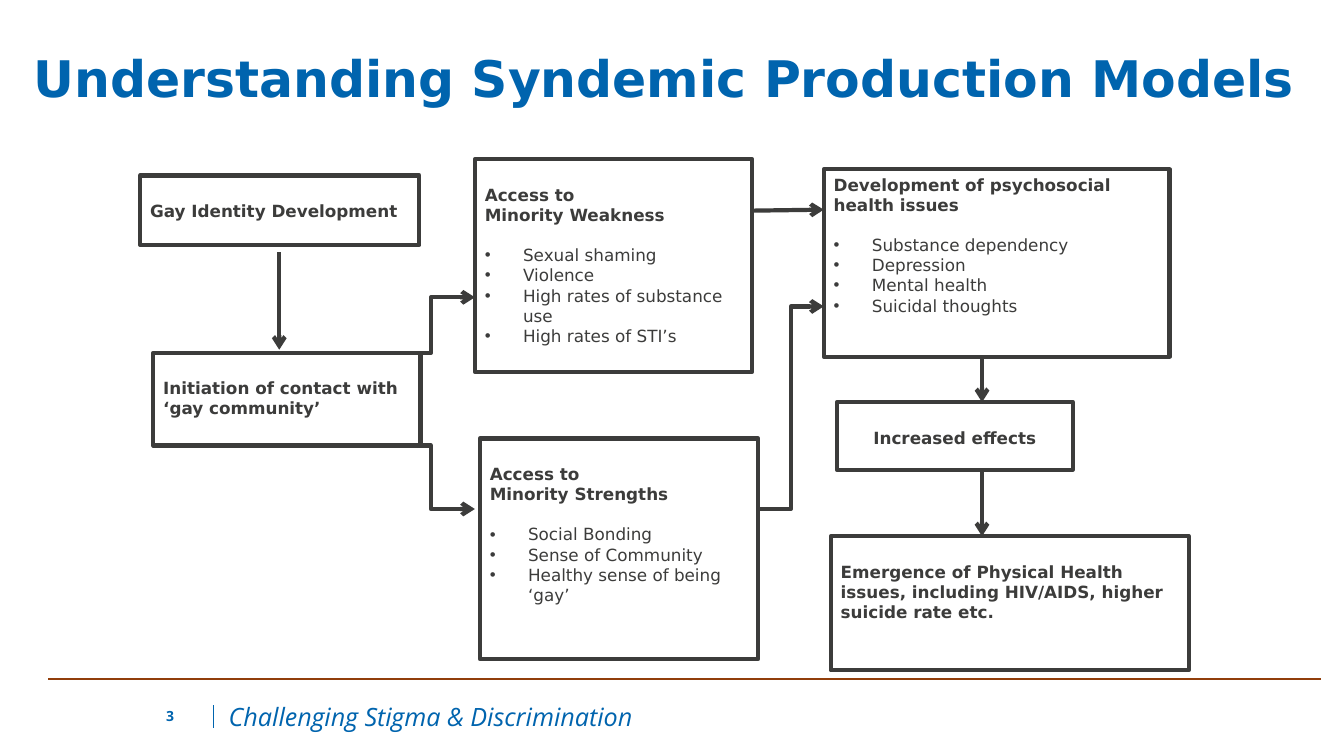
from dataclasses import dataclass

from lxml import etree
from pptx import Presentation
from pptx.dml.color import RGBColor
from pptx.enum.shapes import MSO_CONNECTOR, MSO_SHAPE
from pptx.enum.text import MSO_ANCHOR, MSO_AUTO_SIZE, PP_ALIGN
from pptx.oxml.ns import qn
from pptx.util import Emu, Pt

STRAIGHT, ELBOW = MSO_CONNECTOR.STRAIGHT, MSO_CONNECTOR.ELBOW
RECTANGLE = MSO_SHAPE.RECTANGLE
TOP, MIDDLE = MSO_ANCHOR.TOP, MSO_ANCHOR.MIDDLE
LEFT, CENTER = PP_ALIGN.LEFT, PP_ALIGN.CENTER
NO_AUTOFIT = MSO_AUTO_SIZE.NONE

EMU_PER_PX = 9144  # 100 px to the inch
TITLE_ONLY = 5
BLUE, CHARCOAL, BROWN, WHITE = "0064AE", "3C3C3B", "913E0B", "FFFFFF"

TITLE_FORMAT = {"name": "DejaVu Sans", "size": Pt(36), "bold": True}
HEADING_FORMAT = {"name": "DejaVu Sans", "size": Pt(12), "bold": True}
BULLET_FORMAT = HEADING_FORMAT | {"bold": False}
FOOTER_FORMAT = {"name": "Open Sans", "size": Pt(18), "italic": True}
NUMBER_FORMAT = {"name": "Open Sans", "size": Pt(10), "bold": True}

INSET_X, INSET_Y = 10, 5
LINE_HEIGHT = 20
BULLET_INDENT = 38


@dataclass
class Box:
    left: int
    top: int
    width: int
    height: int
    headings: tuple[str, ...]
    bullets: tuple[str, ...] = ()
    lines_above: int = 1
    align: PP_ALIGN = LEFT


@dataclass
class Line:
    start: tuple[int, int]
    end: tuple[int, int]
    kind: MSO_CONNECTOR = STRAIGHT
    color: str = CHARCOAL
    weight: float = 3
    arrow: bool = True


BOXES = [
    Box(139, 174, 277, 69, ("Gay Identity Development",)),
    Box(152, 350, 265, 92, ("Initiation of contact with ‘gay community’",)),
    Box(471, 158, 275, 211, ("Access to", "Minority Weakness"),
        ("Sexual shaming", "Violence", "High rates of substance use",
         "High rates of STI’s")),
    Box(476, 435, 276, 219, ("Access to", "Minority Strengths"),
        ("Social Bonding", "Sense of Community",
         "Healthy sense of being ‘gay’")),
    Box(817, 168, 343, 186, ("Development of psychosocial health issues",),
        ("Substance dependency", "Depression", "Mental health",
         "Suicidal thoughts"), lines_above=0),
    Box(824, 532, 355, 133,
        ("Emergence of Physical Health issues, including HIV/AIDS, "
         "higher suicide rate etc.",)),
    Box(830, 399, 234, 67, ("Increased effects",), align=CENTER),
]

FOOTER_LINES = [
    Line((48, 674), (1310, 674), color=BROWN, weight=1.5, arrow=False),
    Line((212, 722), (212, 699), color=BLUE, weight=0.75, arrow=False),
]

ARROWS = [
    Line((277, 250), (277, 347)),
    Line((384, 350), (471, 295), ELBOW),
    Line((384, 442), (471, 505), ELBOW),
    Line((746, 209), (817, 208)),
    Line((752, 505), (817, 304), ELBOW),
    Line((974, 355), (974, 399)),
    Line((974, 466), (974, 532)),
]


def px(length: int) -> Emu:
    return Emu(length * EMU_PER_PX)


def rgb(color: str) -> RGBColor:
    return RGBColor.from_string(color)


def format_font(font, values: dict, color: str) -> None:
    for name, value in values.items():
        setattr(font, name, value)
    font.color.rgb = rgb(color)


def set_frame(frame, anchor, top_inset: int = INSET_Y) -> None:
    values = {
        "word_wrap": True, "auto_size": NO_AUTOFIT, "vertical_anchor": anchor,
        "margin_left": px(INSET_X), "margin_right": px(INSET_X),
        "margin_top": px(top_inset), "margin_bottom": px(INSET_Y),
    }
    for name, value in values.items():
        setattr(frame, name, value)


def write(para, text: str, values: dict, color: str, align=LEFT) -> None:
    span = para.add_run()
    span.text = text
    para.alignment = align
    format_font(span.font, values, color)


def add_bullet(para) -> None:
    properties = para._p.get_or_add_pPr()
    properties.set("marL", str(px(BULLET_INDENT)))
    properties.set("indent", str(-px(BULLET_INDENT)))
    etree.SubElement(properties, qn("a:buFont"), typeface="Arial")
    etree.SubElement(properties, qn("a:buChar"), char="•")


def draw_box(page, box: Box) -> None:
    shape = page.shapes.add_shape(
        RECTANGLE, px(box.left), px(box.top), px(box.width), px(box.height))
    shape.shadow.inherit = False
    shape.fill.solid()
    shape.fill.fore_color.rgb = rgb(WHITE)
    shape.line.color.rgb = rgb(CHARCOAL)
    shape.line.width = Pt(3)
    frame = shape.text_frame
    set_frame(frame, TOP, INSET_Y + box.lines_above * LINE_HEIGHT)
    for index, heading in enumerate(box.headings):
        para = frame.add_paragraph() if index else frame.paragraphs[0]
        write(para, heading, HEADING_FORMAT, CHARCOAL, box.align)
    for index, bullet in enumerate(box.bullets):
        para = frame.add_paragraph()
        add_bullet(para)
        if index == 0:
            para.space_before = px(LINE_HEIGHT)
        write(para, bullet, BULLET_FORMAT, CHARCOAL)


def draw_line(page, line: Line) -> None:
    connector = page.shapes.add_connector(
        line.kind, *map(px, line.start + line.end))
    connector.line.color.rgb = rgb(line.color)
    connector.line.width = Pt(line.weight)
    if line.arrow:
        outline = connector.line._get_or_add_ln()
        etree.SubElement(outline, qn("a:tailEnd"), type="arrow")
    etree.SubElement(connector._element.spPr, qn("a:effectLst"))


def draw_label(page, left: int, width: int, text: str, values: dict) -> None:
    label = page.shapes.add_textbox(px(left), px(695), px(width), px(31))
    set_frame(label.text_frame, MIDDLE)
    write(label.text_frame.paragraphs[0], text, values, BLUE)


def draw_title(page, text: str) -> None:
    title = page.shapes.title
    title.left, title.top = px(23), px(8)
    title.width, title.height = px(1283), px(145)
    set_frame(title.text_frame, MIDDLE)
    para = title.text_frame.paragraphs[0]
    para.line_spacing = 0.9
    write(para, text, TITLE_FORMAT, BLUE)


def main() -> None:
    deck = Presentation()
    deck.slide_width, deck.slide_height = px(1333), px(750)
    page = deck.slides.add_slide(deck.slide_layouts[TITLE_ONLY])

    # Title and footer
    draw_title(page, "Understanding Syndemic Production Models")
    for line in FOOTER_LINES:
        draw_line(page, line)
    draw_label(page, 217, 450, "Challenging Stigma & Discrimination",
               FOOTER_FORMAT)
    draw_label(page, 155, 52, "3", NUMBER_FORMAT)

    # Flow diagram
    for box in BOXES:
        draw_box(page, box)
    for arrow in ARROWS:
        draw_line(page, arrow)

    deck.save("out.pptx")


if __name__ == "__main__":
    main()
